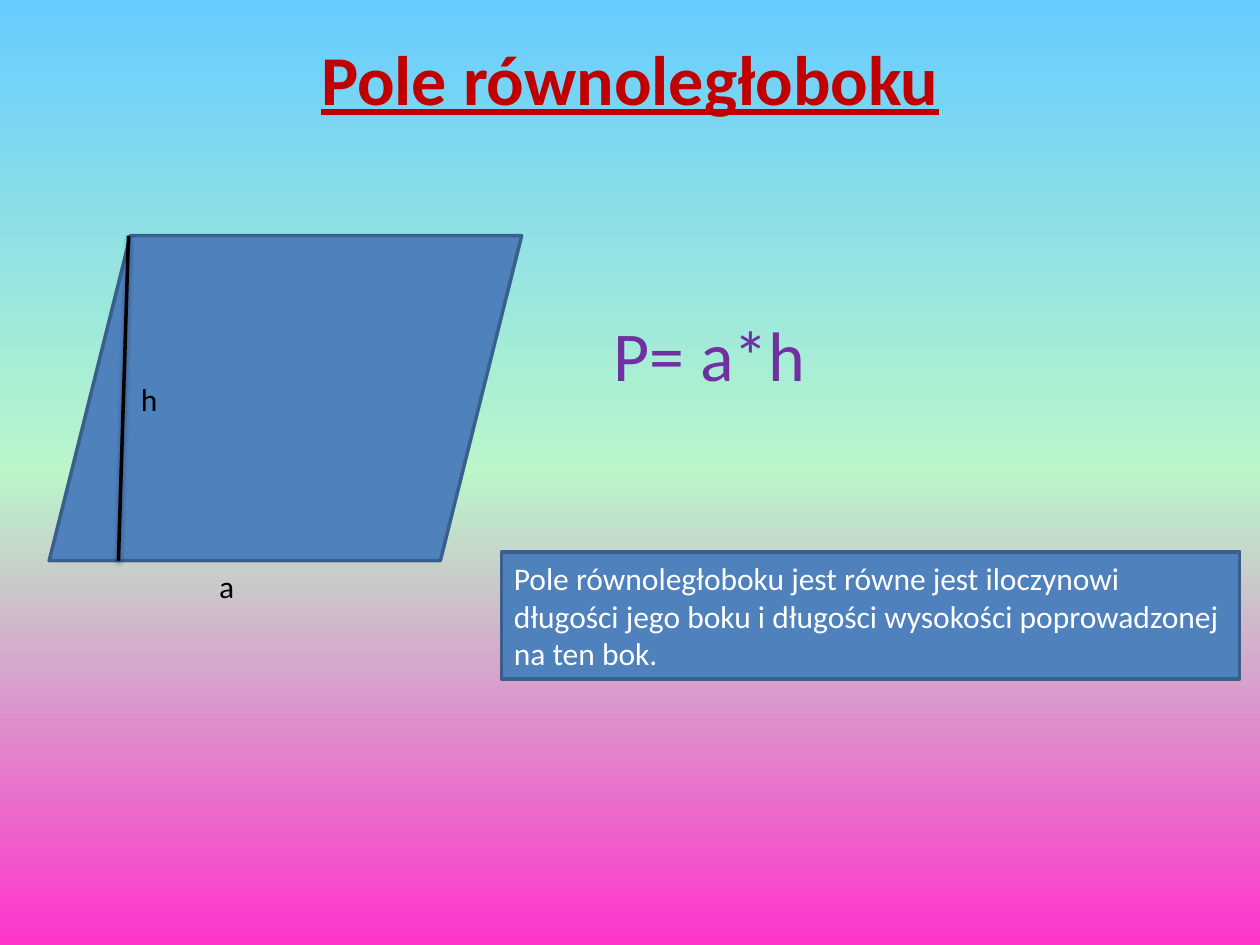
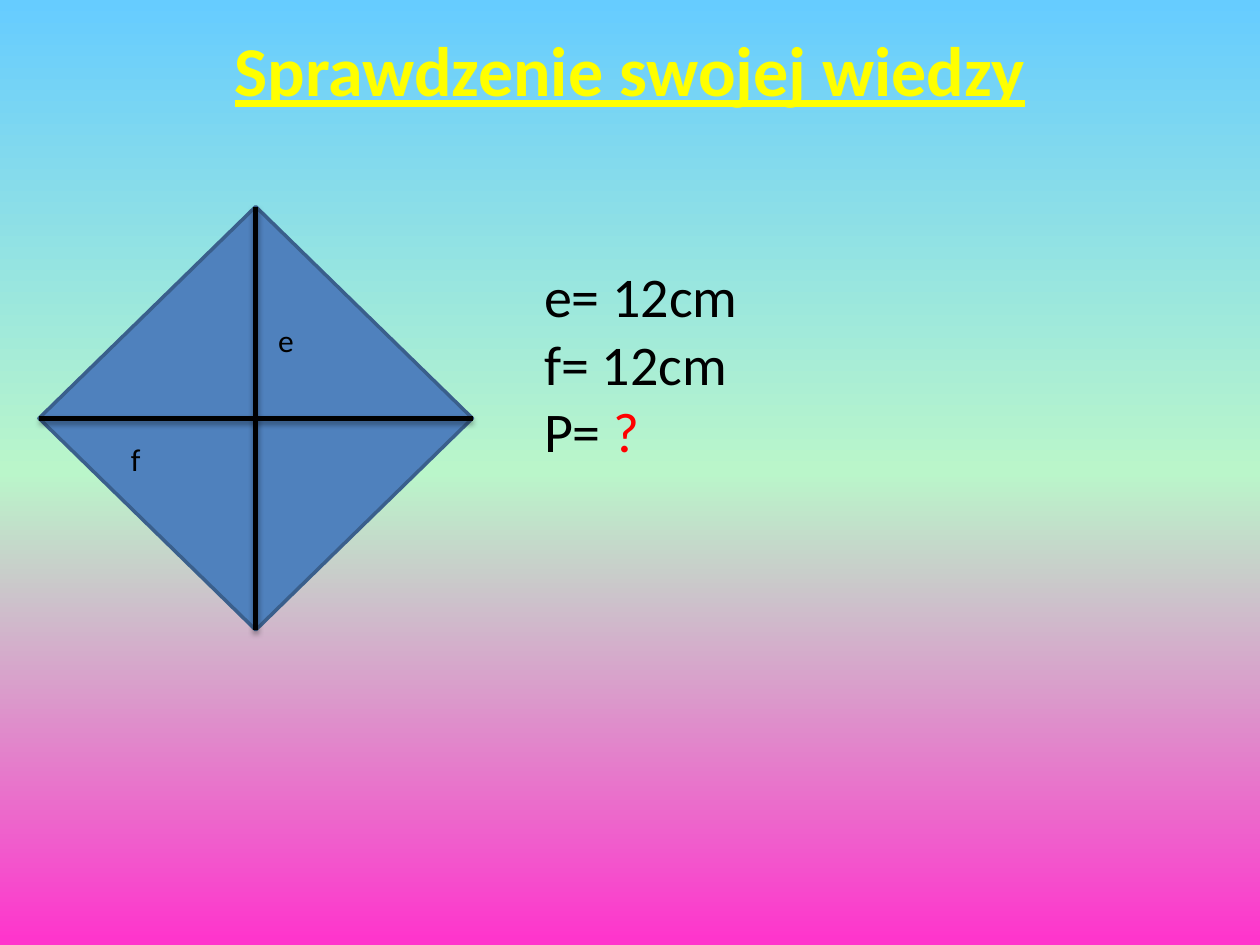
from copy import deepcopy
from dataclasses import dataclass

from lxml import etree
from pptx import Presentation
from pptx.dml.color import RGBColor
from pptx.enum import shapes, text
from pptx.oxml.ns import qn
from pptx.util import Inches, Pt


@dataclass(frozen=True)
class Theme:
    font: str = "Calibri"
    backdrop: tuple = ((0, "66CCFF"), (0.5, "BAF6CA"), (1, "FF33CC"))
    figure: str = "4F81BD"
    outline: str = "3A5F8C"
    ink: str = "000000"
    light: str = "FFFFFF"
    formula: str = "7030A0"
    question: str = "FF0000"
    lesson_title: str = "C00000"
    quiz_title: str = "FFFF00"
    title_size: int = 40
    data_size: int = 32
    body_size: int = 18
    outline_width: int = 2


THEME = Theme()


def rgb(code):
    return RGBColor.from_string(code)


def inches(*lengths):
    return [Inches(length) for length in lengths]


def paint_background(slide):
    fill = slide.background.fill
    fill.gradient()
    fill.gradient_angle = 270
    first_stop = slide.element.find(".//" + qn("a:gs"))
    first_stop.addnext(deepcopy(first_stop))
    for stop, (position, color) in zip(fill.gradient_stops, THEME.backdrop):
        stop.position = position
        stop.color.rgb = rgb(color)


def style_run(run, size, color):
    run.font.name = THEME.font
    run.font.size = Pt(size)
    run.font.color.rgb = rgb(color)


def write(frame, wording, size, color, align=text.PP_ALIGN.LEFT):
    frame.word_wrap = True
    frame.auto_size = text.MSO_AUTO_SIZE.SHAPE_TO_FIT_TEXT
    frame.text = wording
    for paragraph in frame.paragraphs:
        paragraph.alignment = align
        for run in paragraph.runs:
            style_run(run, size, color)


def add_text(slide, box, wording, size=THEME.body_size, color=THEME.ink, **options):
    frame = slide.shapes.add_textbox(*inches(*box)).text_frame
    write(frame, wording, size, color, **options)
    return frame


def add_title(slide, top, wording, color):
    frame = add_text(slide, (0, top, 10, 0.77), wording, THEME.title_size,
                     color, align=text.PP_ALIGN.CENTER)
    font = frame.paragraphs[0].runs[0].font
    font.bold = True
    font.underline = True


def add_figure(slide, preset, box):
    figure = slide.shapes.add_shape(preset, *inches(*box))
    figure.shadow.inherit = False
    figure.fill.solid()
    figure.fill.fore_color.rgb = rgb(THEME.figure)
    figure.line.color.rgb = rgb(THEME.outline)
    figure.line.width = Pt(THEME.outline_width)
    return figure


def add_segment(slide, start, end, width, opacity, distance):
    segment = slide.shapes.add_connector(
        shapes.MSO_CONNECTOR.STRAIGHT, *inches(*start, *end))
    segment.line.color.rgb = rgb(THEME.ink)
    segment.line.width = Pt(width)
    effects = etree.SubElement(segment.element.spPr, qn("a:effectLst"))
    shadow = etree.SubElement(
        effects, qn("a:outerShdw"), blurRad=str(Pt(3.1)),
        dist=str(Pt(distance)), dir="5400000", rotWithShape="0")
    shade = etree.SubElement(shadow, qn("a:srgbClr"), val=THEME.ink)
    etree.SubElement(shade, qn("a:alpha"), val=str(opacity * 1000))


def new_slide(deck):
    slide = deck.slides.add_slide(deck.slide_layouts[6])
    paint_background(slide)
    return slide


def build_parallelogram_area(deck):
    slide = new_slide(deck)
    add_title(slide, 0.23, "Pole równoległoboku", THEME.lesson_title)
    left, top, width, height = 0.39, 1.87, 3.75, 2.58
    base = top + height
    add_figure(slide, shapes.MSO_SHAPE.PARALLELOGRAM, (left, top, width, height))
    add_segment(slide, (1.02, top), (0.94, base), 2, 38, 1.6)
    add_text(slide, (1.02, 2.97, 0.39, 0.4), "h")
    add_text(slide, (1.64, base, 0.63, 0.4), "a")
    add_text(slide, (4.77, 2.42, 3.98, 0.77), "P= a*h",
             THEME.title_size, THEME.formula)
    rule = add_figure(slide, shapes.MSO_SHAPE.RECTANGLE, (3.98, 4.38, 5.86, 1.01))
    write(rule.text_frame,
          "Pole równoległoboku jest równe jest iloczynowi długości jego boku "
          "i długości wysokości poprowadzonej na ten bok.",
          THEME.body_size, THEME.light)


def build_knowledge_check(deck):
    slide = new_slide(deck)
    add_title(slide, 0.16, "Sprawdzenie swojej wiedzy", THEME.quiz_title)
    left, top, width, height = 0.31, 1.64, 3.44, 3.36
    center_x, center_y = left + width / 2, top + height / 2
    add_figure(slide, shapes.MSO_SHAPE.DIAMOND, (left, top, width, height))
    diagonals = (((center_x, top), (center_x, top + height)),
                 ((left, center_y), (left + width, center_y)))
    for start, end in diagonals:
        add_segment(slide, start, end, 3, 35, 1.8)
    add_text(slide, (2.11, 2.5, 0.47, 0.4), "e")
    add_text(slide, (0.94, 3.44, 0.55, 0.4), "f")
    task = add_text(slide, (4.22, 2.03, 5.16, 1.72),
                    "e= 12cm\nf= 12cm\nP= ", THEME.data_size)
    unknown = task.paragraphs[-1].add_run()
    unknown.text = "?"
    style_run(unknown, THEME.data_size, THEME.question)


def main():
    deck = Presentation()
    deck.slide_width, deck.slide_height = inches(10, 7.5)
    build_parallelogram_area(deck)
    build_knowledge_check(deck)
    deck.save("out.pptx")


if __name__ == "__main__":
    main()
